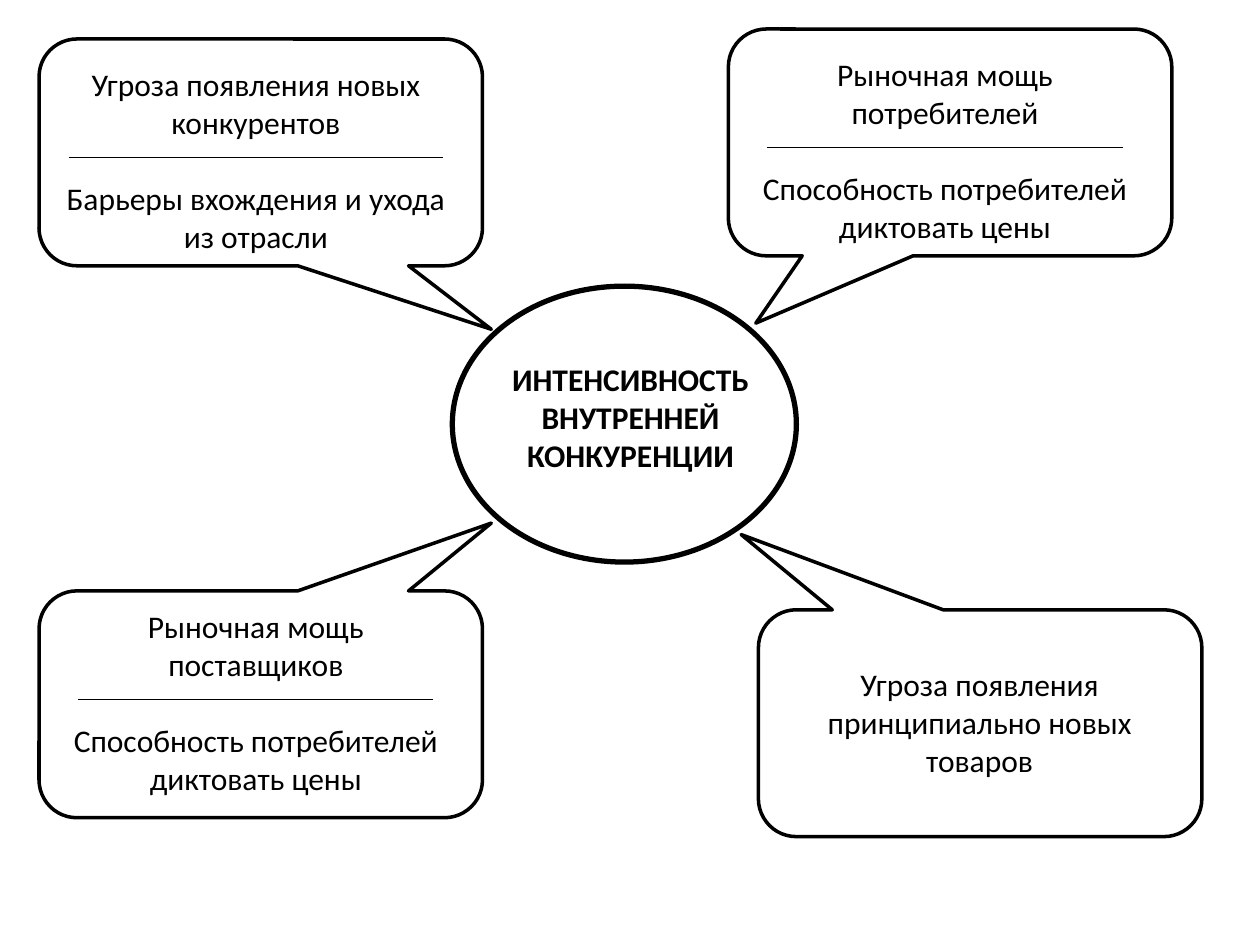
from dataclasses import dataclass

from pptx import Presentation
from pptx import util as u
from pptx.dml.color import RGBColor
from pptx.enum import shapes as s, text as t
from pptx.oxml.ns import qn
from lxml import etree


@dataclass
class Theme:
    ink: RGBColor = RGBColor(0, 0, 0)
    font: str = "Calibri"
    size: float = 18
    line: float = 22    # height of one text line
    thin: float = 0.75
    mid: float = 2
    bold: float = 3


class Sheet:
    def __init__(self, slide, theme):
        self.slide, self.theme = slide, theme

    def shape(self, kind, x, y, w, h, width):
        item = self.slide.shapes.add_shape(kind, *map(u.Pt, (x, y, w, h)))
        item.shadow.inherit = False
        item.fill.background()
        item.line.color.rgb = self.theme.ink
        item.line.width = u.Pt(width)
        return item

    def bubble(self, x, y, tip):
        item = self.shape(s.MSO_SHAPE.ROUNDED_RECTANGULAR_CALLOUT,
                          x, y, 253.4, 129.6, self.theme.mid)
        for i, part in enumerate((*tip, 0.167)):
            item.adjustments[i] = part

    def rule(self, x, y, w):
        item = self.slide.shapes.add_connector(
            s.MSO_CONNECTOR.STRAIGHT, *map(u.Pt, (x, y, x + w, y)))
        item.line.color.rgb = self.theme.ink
        item.line.width = u.Pt(self.theme.thin)
        etree.SubElement(item.line._get_or_add_ln().getparent(), qn("a:effectLst"))

    def words(self, x, y, w, h, parts, bold=False):
        box = self.slide.shapes.add_textbox(*map(u.Pt, (x, y, w, h)))
        frame = box.text_frame
        frame.word_wrap = True
        frame.auto_size = t.MSO_AUTO_SIZE.SHAPE_TO_FIT_TEXT
        for i, part in enumerate(parts):
            para = frame.add_paragraph() if i else frame.paragraphs[0]
            para.alignment = t.PP_ALIGN.CENTER
            if i:
                para.space_before = u.Pt(self.theme.line)
            run = para.add_run()
            run.text = part
            run.font.name = self.theme.font
            run.font.size = u.Pt(self.theme.size)
            run.font.bold = bold
            run.font.color.rgb = self.theme.ink


# Callouts: left, top, pointer tip
BUBBLES = [
    (416.2, 16.6, (-0.438, 0.797)),
    (433.4, 348.5, (-0.539, -0.832)),
    (22.3, 22.3, (0.52, 0.78)),
    (22.3, 337.7, (0.52, -0.799)),
]

# Split texts: left, top, rule width, force, its meaning
FORCES = [
    (421.9, 28.1, 203, "Рыночная мощь потребителей",
     "Способность потребителей диктовать цены"),
    (28.1, 33.8, 213.8, "Угроза появления новых конкурентов",
     "Барьеры вхождения и ухода из отрасли"),
    (28.1, 343.4, 203, "Рыночная мощь поставщиков",
     "Способность потребителей диктовать цены"),
]
WIDTH = 236.2


def main():
    deck = Presentation()
    deck.slide_width, deck.slide_height = u.Pt(720), u.Pt(540)
    sheet = Sheet(deck.slides.add_slide(deck.slide_layouts[6]), Theme())

    # Centre
    sheet.shape(s.MSO_SHAPE.OVAL, 258.5, 163.5, 196.6, 157.7, sheet.theme.bold)
    sheet.words(281.5, 202.3, 157.7, 72.7,
                ["ИНТЕНСИВНОСТЬ ВНУТРЕННЕЙ КОНКУРЕНЦИИ"], bold=True)

    # Callouts around it
    for x, y, tip in BUBBLES:
        sheet.bubble(x, y, tip)

    # Texts, each with a rule centred between its two parts
    for x, y, span, force, sense in FORCES:
        sheet.words(x, y, WIDTH, 116.6, [force, sense])
        sheet.rule(x + (WIDTH - span) / 2, y + 56.2, span)

    # Text without a rule
    sheet.words(450, 376.6, 219.6, 72.7,
                ["Угроза появления принципиально новых товаров"])

    deck.save("out.pptx")


if __name__ == "__main__":
    main()
